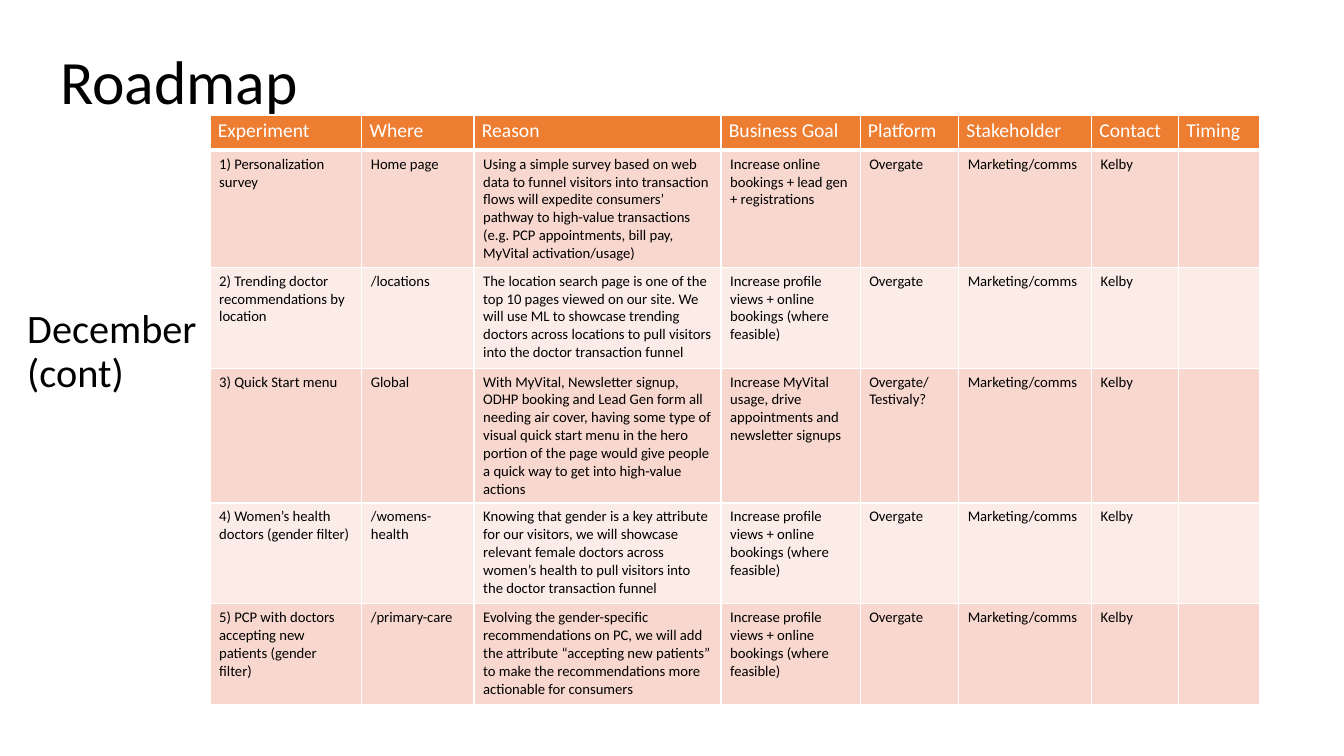
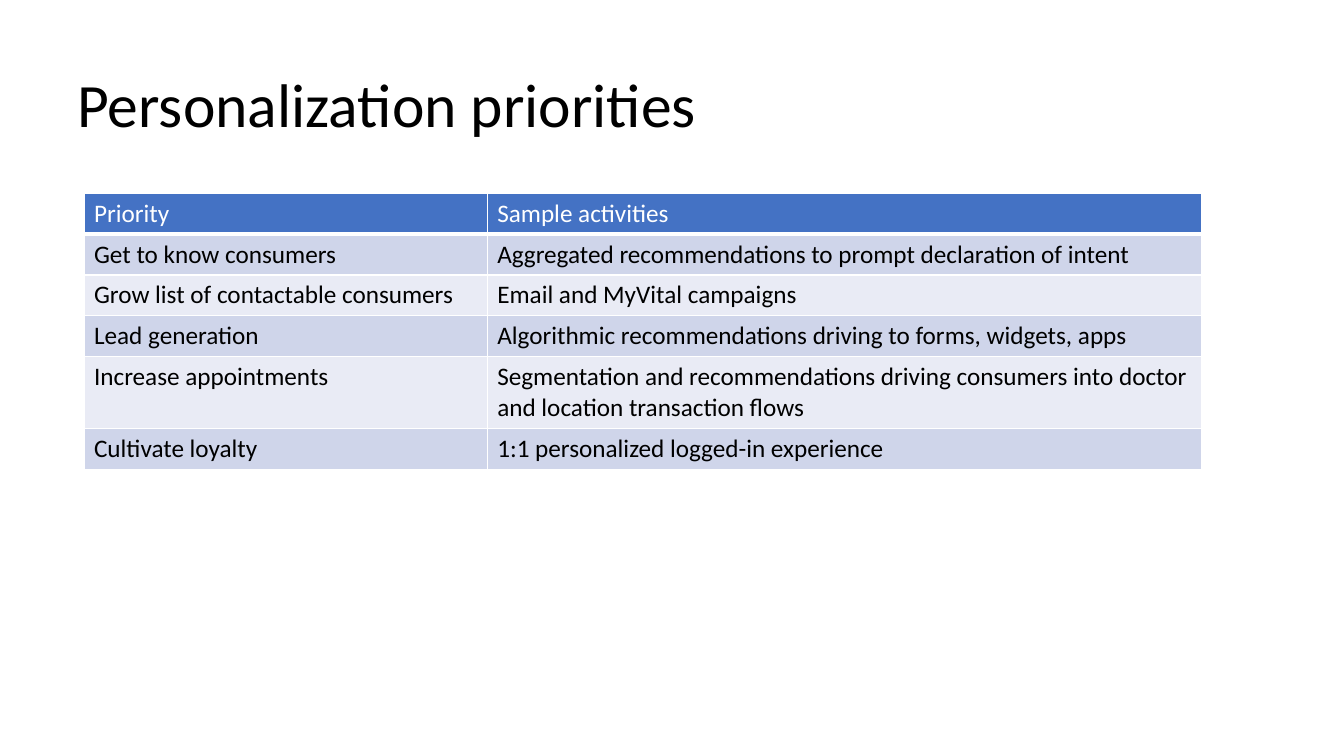
import pptx
import pptx.util
import pptx.dml.color
import pptx.enum.text
import lxml.etree
from pptx.oxml.ns import qn

Pt = pptx.util.Pt
RGBColor = pptx.dml.color.RGBColor
Anchor = pptx.enum.text.MSO_ANCHOR

FONT = "Calibri"
BLACK = RGBColor(0x00, 0x00, 0x00)
WHITE = RGBColor(0xFF, 0xFF, 0xFF)
ORANGE_BANDS = (RGBColor(0xED, 0x7D, 0x31), RGBColor(0xF8, 0xD7, 0xCE), RGBColor(0xFC, 0xEC, 0xE8))
BLUE_BANDS = (RGBColor(0x44, 0x72, 0xC4), RGBColor(0xCF, 0xD5, 0xEA), RGBColor(0xE9, 0xEB, 0xF5))


def write_text(frame, text, size, color=BLACK, spacing=1.0, anchor=Anchor.TOP):
    frame.word_wrap = True
    frame.vertical_anchor = anchor
    paragraph = frame.paragraphs[0]
    paragraph.alignment = pptx.enum.text.PP_ALIGN.LEFT
    paragraph.line_spacing = spacing
    run = paragraph.add_run()
    run.text = text
    run.font.name = FONT
    run.font.size = Pt(size)
    run.font.bold = False
    run.font.color.rgb = color


def add_border(cell, side, width):
    properties = cell._tc.get_or_add_tcPr()
    line = lxml.etree.SubElement(properties, qn(f"a:ln{side}"), w=str(Pt(width)))
    fill = lxml.etree.SubElement(line, qn("a:solidFill"))
    lxml.etree.SubElement(fill, qn("a:srgbClr"), val=str(WHITE))


GOAL = "Increase profile views + online bookings (where feasible)"
OWNERS = ("Marketing/comms", "Kelby", "")
roadmap_rows = [
    ("Experiment", "Where", "Reason", "Business Goal", "Platform", "Stakeholder", "Contact", "Timing"),
    ("1) Personalization survey", "Home page",
     "Using a simple survey based on web data to funnel visitors into transaction flows will expedite "
     "consumers’ pathway to high-value transactions (e.g. PCP appointments, bill pay, "
     "MyVital activation/usage)",
     "Increase online bookings + lead gen + registrations", "Overgate", *OWNERS),
    ("2) Trending doctor recommendations by location", "/locations",
     "The location search page is one of the top 10 pages viewed on our site. We will use ML to showcase "
     "trending doctors across locations to pull visitors into the doctor transaction funnel",
     GOAL, "Overgate", *OWNERS),
    ("3) Quick Start menu", "Global",
     "With MyVital, Newsletter signup, ODHP booking and Lead Gen form all needing air cover, having some "
     "type of visual quick start menu in the hero portion of the page would give people a quick way to "
     "get into high-value actions",
     "Increase MyVital usage, drive appointments and newsletter signups", "Overgate/ Testivaly?", *OWNERS),
    ("4) Women’s health doctors (gender filter)", "/womens-health",
     "Knowing that gender is a key attribute for our visitors, we will showcase relevant female doctors "
     "across women’s health to pull visitors into the doctor transaction funnel",
     GOAL, "Overgate", *OWNERS),
    ("5) PCP with doctors accepting new patients (gender filter)", "/primary-care",
     "Evolving the gender-specific recommendations on PC, we will add the attribute “accepting new "
     "patients” to make the recommendations more actionable for consumers",
     GOAL, "Overgate", *OWNERS),
]
priority_rows = [
    ("Priority", "Sample activities"),
    ("Get to know consumers", "Aggregated recommendations to prompt declaration of intent"),
    ("Grow list of contactable consumers", "Email and MyVital campaigns"),
    ("Lead generation", "Algorithmic recommendations driving to forms, widgets, apps"),
    ("Increase appointments",
     "Segmentation and recommendations driving consumers into doctor and location transaction flows"),
    ("Cultivate loyalty", "1:1 personalized logged-in experience"),
]

pages = [
    dict(title="December (cont)", title_size=28.8, title_box=(12.24, 217, 156.24, 69.84),
         heading="Roadmap", rows=roadmap_rows, bands=ORANGE_BANDS, origin=(150, 82.4),
         columns=(108.4, 80.2, 176.4, 99.4, 70.3, 95, 62.2, 58), heights=(25, 72),
         sizes=(14, 10.5), header_insets=(5.6, 2.8), body_insets=(6.6, 3.6)),
    dict(title="Personalization priorities", title_size=44, title_box=(48, 42, 864, 69.84),
         heading=None, rows=priority_rows, bands=BLUE_BANDS, origin=(60, 138),
         columns=(288, 510), heights=(29.2, 29.2),
         sizes=(18, 18), header_insets=(7.2, 3.6), body_insets=(7.2, 3.6)),
]

presentation = pptx.Presentation()
presentation.slide_width = Pt(960)
presentation.slide_height = Pt(540)

for page in pages:
    slide = presentation.slides.add_slide(presentation.slide_layouts[5])
    title = slide.shapes.title
    title.left, title.top, title.width, title.height = map(Pt, page["title_box"])
    write_text(title.text_frame, page["title"], page["title_size"], spacing=0.9, anchor=Anchor.MIDDLE)

    rows, columns = page["rows"], page["columns"]
    header_height, body_height = page["heights"]
    total_height = header_height + body_height * (len(rows) - 1)
    left, top = page["origin"]
    table = slide.shapes.add_table(
        len(rows), len(columns), Pt(left), Pt(top), Pt(sum(columns)), Pt(total_height)).table
    table.first_row = False
    table.horz_banding = False
    for column, width in zip(table.columns, columns):
        column.width = Pt(width)

    for row_index, values in enumerate(rows):
        is_header = row_index == 0
        table.rows[row_index].height = Pt(header_height if is_header else body_height)
        band = page["bands"][0 if is_header else 2 - row_index % 2]
        side_inset, edge_inset = page["header_insets" if is_header else "body_insets"]
        for column_index, value in enumerate(values):
            cell = table.cell(row_index, column_index)
            cell.margin_left = cell.margin_right = Pt(side_inset)
            cell.margin_top = cell.margin_bottom = Pt(edge_inset)
            for side in "LRTB":
                add_border(cell, side, 3 if is_header and side == "B" else 1)
            cell.fill.solid()
            cell.fill.fore_color.rgb = band
            if value:
                write_text(cell.text_frame, value, page["sizes"][0 if is_header else 1],
                           color=WHITE if is_header else BLACK)

    if page["heading"]:
        heading = slide.shapes.add_textbox(Pt(36), Pt(27.36), Pt(864), Pt(69.84))
        write_text(heading.text_frame, page["heading"], 44)

presentation.save("out.pptx")
